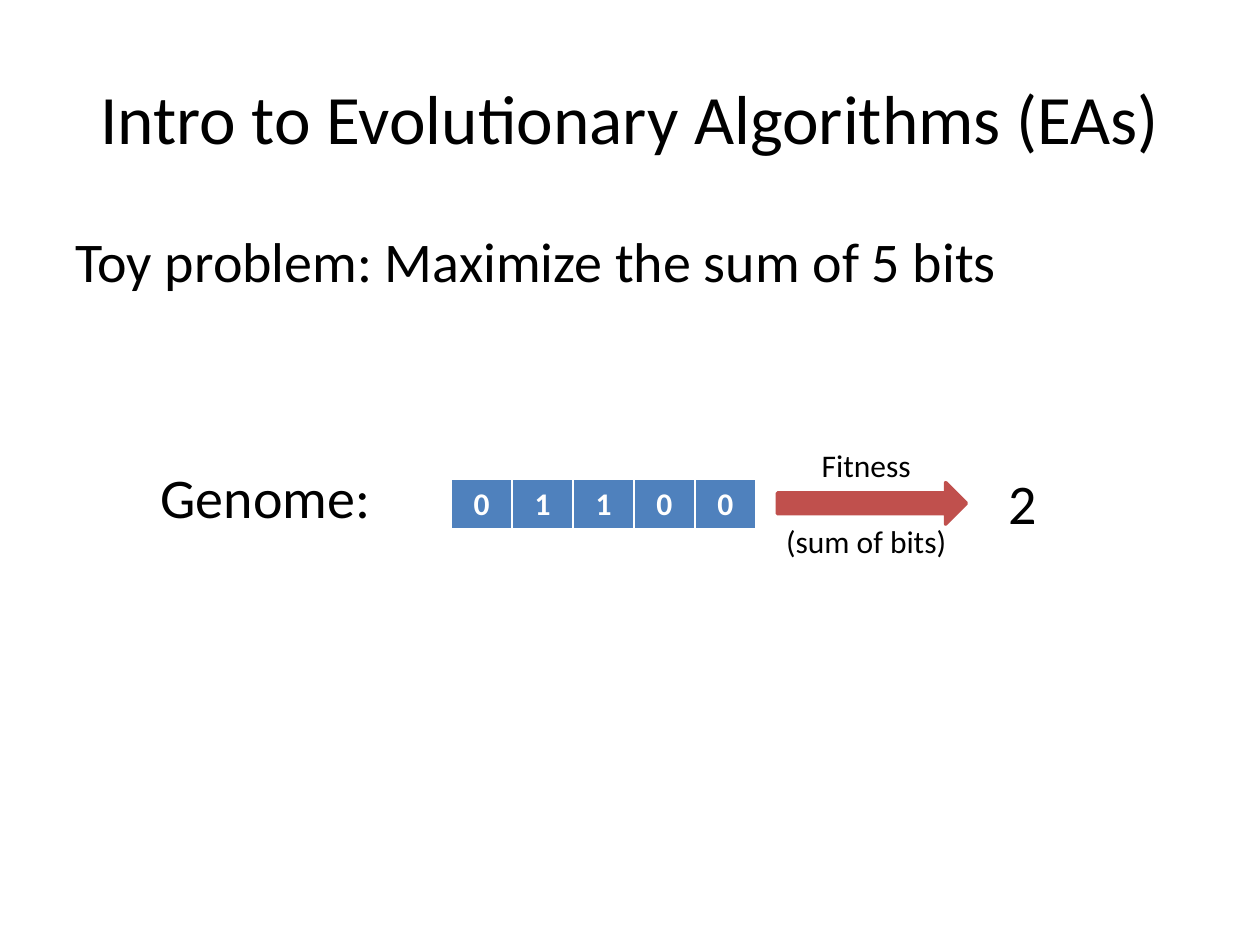
from dataclasses import dataclass

from lxml import etree
from pptx import Presentation
from pptx.dml.color import RGBColor
from pptx.enum.shapes import MSO_SHAPE
from pptx.enum.text import MSO_ANCHOR, PP_ALIGN
from pptx.oxml.ns import qn
from pptx.util import Inches, Pt

LEFT, CENTER = PP_ALIGN.LEFT, PP_ALIGN.CENTER
TOP, MIDDLE = MSO_ANCHOR.TOP, MSO_ANCHOR.MIDDLE
RIGHT_ARROW = MSO_SHAPE.RIGHT_ARROW
BLANK_LAYOUT = 6
SLIDE_WIDTH, SLIDE_HEIGHT = Inches(10), Inches(7.5)


@dataclass(frozen=True)
class Theme:
    font: str = "Calibri"
    text: str = "000000"
    white: str = "FFFFFF"
    gene: str = "4F81BD"
    arrow: str = "C0504D"
    title_size: float = 39.6
    body_size: float = 32
    label_size: float = 18


THEME = Theme()


def place(left, top, width, height):
    """Turn percentages of the slide's size into lengths."""
    return (int(SLIDE_WIDTH * left / 100), int(SLIDE_HEIGHT * top / 100),
            int(SLIDE_WIDTH * width / 100), int(SLIDE_HEIGHT * height / 100))


def write_paragraph(paragraph, text, size, align, color=THEME.text, bold=False):
    paragraph.alignment = align
    run = paragraph.add_run()
    run.text = text
    font_format = {"name": THEME.font, "size": Pt(size), "bold": bold}
    for name, value in font_format.items():
        setattr(run.font, name, value)
    run.font.color.rgb = RGBColor.from_string(color)


def add_text(slide, area, lines, size, align=LEFT, anchor=TOP, gap=0):
    """Add a text box with one paragraph a line, gap points apart."""
    frame = slide.shapes.add_textbox(*place(*area)).text_frame
    frame.word_wrap = True
    frame.vertical_anchor = anchor
    for index, line in enumerate(lines):
        paragraph = frame.add_paragraph() if index else frame.paragraphs[0]
        paragraph.space_before = Pt(gap if index else 0)
        write_paragraph(paragraph, line, size, align)


def set_borders(cell, widths):
    """Insert the border lines ahead of the cell's fill, as the schema asks."""
    properties = cell._tc.get_or_add_tcPr()
    for index, (side, width) in enumerate(widths.items()):
        line = etree.Element(qn(f"a:{side}"), w=str(Pt(width)))
        fill = etree.SubElement(line, qn("a:solidFill"))
        etree.SubElement(fill, qn("a:srgbClr"), val=THEME.white)
        properties.insert(index, line)


def add_genome(slide, area, bits):
    """Add a one-row table with a cell for each bit."""
    table = slide.shapes.add_table(1, len(bits), *place(*area)).table
    for cell, bit in zip(table.rows[0].cells, bits):
        cell.fill.solid()
        cell.fill.fore_color.rgb = RGBColor.from_string(THEME.gene)
        set_borders(cell, {"lnL": 1, "lnR": 1, "lnT": 1, "lnB": 3})
        write_paragraph(cell.text_frame.paragraphs[0], bit, THEME.label_size,
                        CENTER, THEME.white, bold=True)


def add_arrow(slide, area):
    arrow = slide.shapes.add_shape(RIGHT_ARROW, *place(*area))
    arrow.shadow.inherit = False
    arrow.fill.solid()
    for color_format in (arrow.fill.fore_color, arrow.line.color):
        color_format.rgb = RGBColor.from_string(THEME.arrow)
    arrow.line.width = Pt(2)


def main():
    presentation = Presentation()
    presentation.slide_width = SLIDE_WIDTH
    presentation.slide_height = SLIDE_HEIGHT
    slide = presentation.slides.add_slide(presentation.slide_layouts[BLANK_LAYOUT])

    # Heading and problem statement
    add_text(slide, (5, 4, 90, 16.67), ["Intro to Evolutionary Algorithms (EAs)"],
             THEME.title_size, CENTER, MIDDLE)
    add_text(slide, (5, 23.33, 90, 8.53),
             ["Toy problem: Maximize the sum of 5 bits"], THEME.body_size)

    # Genome
    add_text(slide, (11.75, 48.27, 22, 8.53), ["Genome:"], THEME.body_size)
    add_genome(slide, (35.8, 50.67, 24.2, 5.47), "01100")

    # Fitness arrow, with a label line above and below it, and its result
    add_arrow(slide, (61.7, 51.07, 15, 4.4))
    add_text(slide, (57.5, 46.53, 22.5, 13.47), ["Fitness", "(sum of bits)"],
             THEME.label_size, CENTER, gap=22)
    add_text(slide, (75.8, 48.93, 10.8, 8.53), ["2"], THEME.body_size, CENTER)

    presentation.save("out.pptx")


if __name__ == "__main__":
    main()
